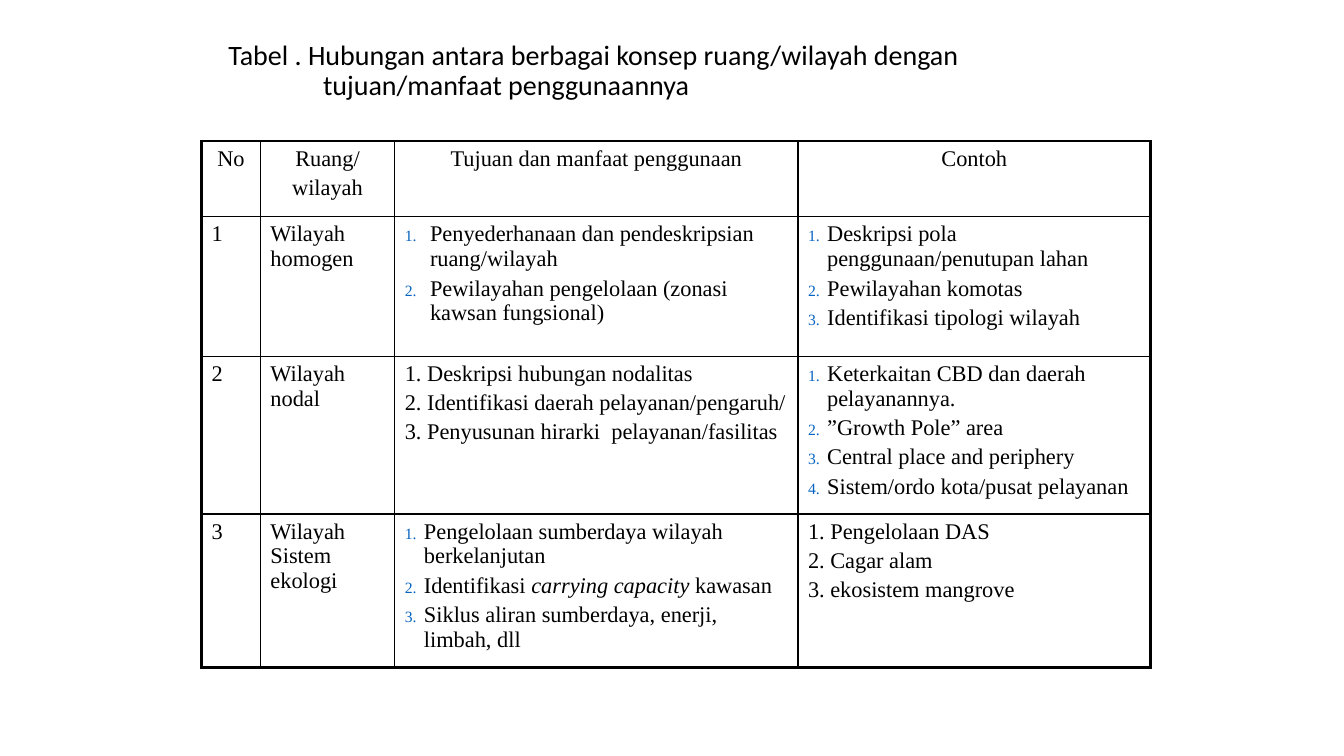
from lxml.etree import SubElement
from pptx import Presentation
from pptx.dml.color import RGBColor as RGB
from pptx.enum.text import MSO_ANCHOR as ANCHOR, PP_ALIGN as ALIGN
from pptx.oxml.ns import qn
from pptx.util import Inches, Pt

COLORS = {"ink": "000000", "number": "0563C1"}
BODY, HEAD = "Times New Roman", "Calibri"
COLS = [7, 16, 48, 42]
ROWS = [9, 16.6, 17.7, 17.2]
TITLE = "Tabel . Hubungan antara berbagai konsep ruang/wilayah dengan tujuan/manfaat penggunaannya"
HEADER = [["No"], ["Ruang/", "wilayah"], ["Tujuan dan manfaat penggunaan"], ["Contoh"]]
REGIONS = [
    [["1"], ["Wilayah homogen"],
     ["Penyederhanaan dan pendeskripsian ruang/wilayah",
      "Pewilayahan pengelolaan (zonasi kawsan fungsional)"],
     ["Deskripsi pola penggunaan/penutupan lahan", "Pewilayahan komotas",
      "Identifikasi tipologi wilayah"]],
    [["2"], ["Wilayah nodal"],
     ["1. Deskripsi hubungan nodalitas",
      "2. Identifikasi daerah pelayanan/pengaruh/",
      "3. Penyusunan hirarki  pelayanan/fasilitas"],
     ["Keterkaitan CBD dan daerah pelayanannya.", "”Growth Pole” area",
      "Central place and periphery", "Sistem/ordo kota/pusat pelayanan"]],
    [["3"], ["Wilayah Sistem ekologi"],
     ["Pengelolaan sumberdaya wilayah berkelanjutan",
      "Identifikasi *carrying capacity* kawasan",
      "Siklus aliran sumberdaya, enerji, limbah, dll"],
     ["1. Pengelolaan DAS", "2. Cagar alam", "3. ekosistem mangrove"]],
]
INDENTS = {(1, 2): 0.25, (1, 3): 0.19, (2, 2): 0.25, (2, 3): 0.19, (3, 2): 0.19}
NUMBERED = {(1, 2), (1, 3), (2, 3), (3, 2)}


def grid(n):
    """Return a length of n grid units, 160 across and 90 down the slide."""
    return Inches(n / 12)


def hang(p, inches):
    """Give a paragraph a hanging indent."""
    pPr = p._p.get_or_add_pPr()
    pPr.set("marL", str(Inches(inches)))
    pPr.set("indent", str(-Inches(inches)))


def number(p):
    """Number a paragraph in small coloured figures."""
    pPr = p._p.get_or_add_pPr()
    SubElement(SubElement(pPr, qn("a:buClr")), qn("a:srgbClr"), val=COLORS["number"])
    SubElement(pPr, qn("a:buSzPct"), val="70000")
    SubElement(pPr, qn("a:buFont"), typeface=BODY)
    SubElement(pPr, qn("a:buAutoNum"), type="arabicPeriod")


def write(p, text, font, size):
    """Write text into a paragraph, with parts between asterisks in italics."""
    for i, part in enumerate(text.split("*")):
        r = p.add_run()
        r.text = part
        r.font.name, r.font.size = font, Pt(size)
        r.font.color.rgb = RGB.from_string(COLORS["ink"])
        if i % 2:
            r.font.italic = True


def border(cell, edges):
    """Draw the cell borders, thick on the outer edges of the table."""
    tcPr = cell._tc.get_or_add_tcPr()
    for side, outer in edges.items():
        ln = SubElement(tcPr, qn(f"a:ln{side}"), w=str(Pt(2.25 if outer else 1)))
        SubElement(SubElement(ln, qn("a:solidFill")), qn("a:srgbClr"), val=COLORS["ink"])


def fill_cell(cell, items, indent, numbered, align):
    """Write one paragraph per item into a cell."""
    tf = cell.text_frame
    for i, item in enumerate(items):
        p = tf.add_paragraph() if i else tf.paragraphs[0]
        if indent:
            hang(p, indent)
        if numbered:
            number(p)
        p.alignment = align
        if i:
            p.space_before = Pt(3.2)
        write(p, item, BODY, 16)


def add_title(s):
    """Add the caption above the table."""
    tf = s.shapes.add_textbox(grid(26), grid(3), grid(108), grid(11)).text_frame
    tf.word_wrap = True
    tf.vertical_anchor = ANCHOR.MIDDLE
    p = tf.paragraphs[0]
    hang(p, 0.94)
    p.line_spacing = 0.9
    write(p, TITLE, HEAD, 20)


def add_regions(s):
    """Add the table of region concepts, uses and examples."""
    rows = [HEADER, *REGIONS]
    table = s.shapes.add_table(len(ROWS), len(COLS), grid(24), grid(16.8),
                               grid(sum(COLS)), grid(sum(ROWS))).table
    table.first_row = table.horz_banding = False
    for col, width in zip(table.columns, COLS):
        col.width = grid(width)
    for row, height in zip(table.rows, ROWS):
        row.height = grid(height)
    for i, row in enumerate(rows):
        for j, items in enumerate(row):
            cell = table.cell(i, j)
            fill_cell(cell, items, INDENTS.get((i, j)), (i, j) in NUMBERED,
                      ALIGN.LEFT if i else ALIGN.CENTER)
            border(cell, {"L": j == 0, "R": j == len(COLS) - 1,
                          "T": i == 0, "B": i == len(ROWS) - 1})
            cell.fill.background()


def main():
    """Build the slide and save it."""
    prs = Presentation()
    prs.slide_width, prs.slide_height = grid(160), grid(90)
    s = prs.slides.add_slide(prs.slide_layouts[6])
    add_title(s)
    add_regions(s)
    prs.save("out.pptx")


if __name__ == "__main__":
    main()
